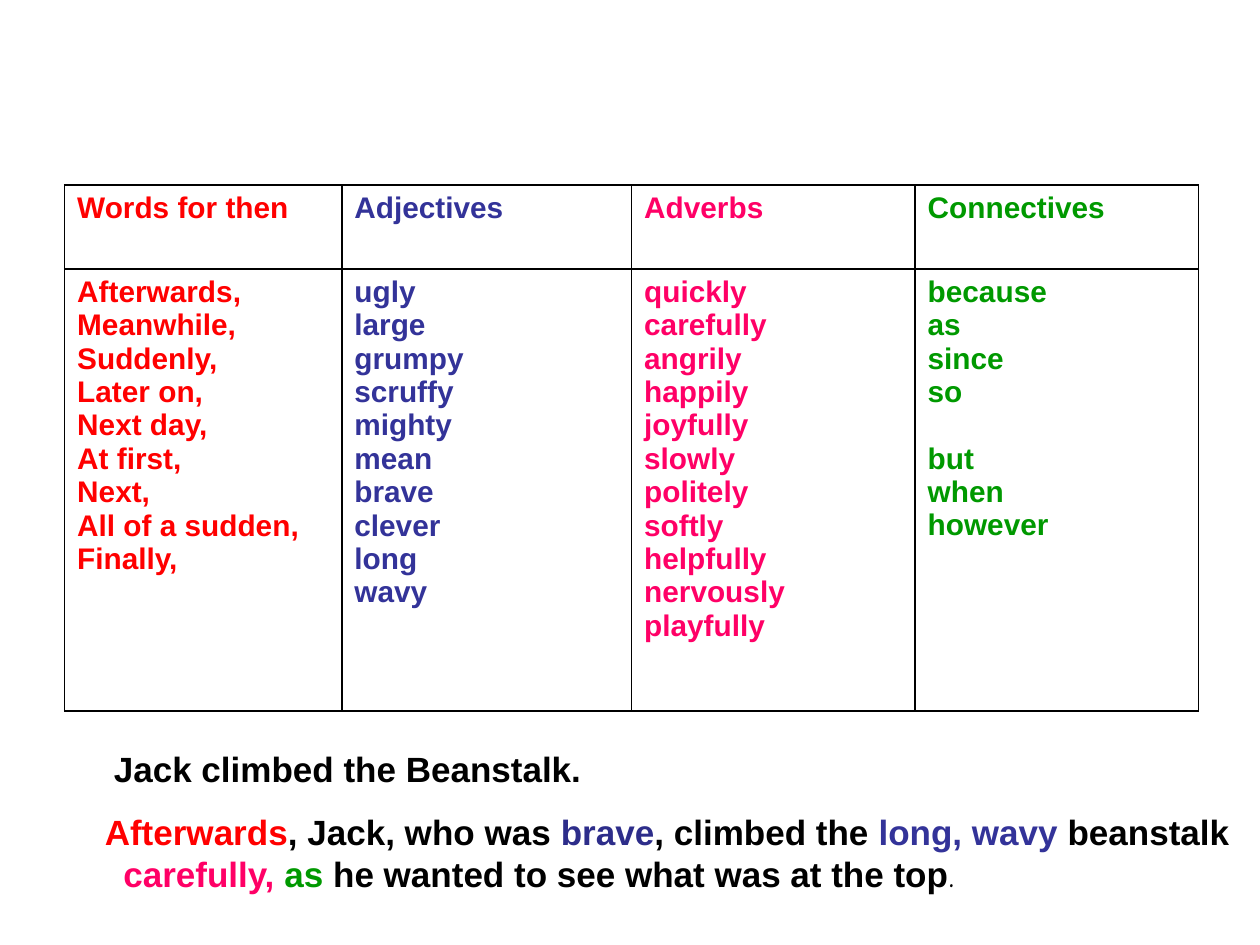
import pptx
import pptx.dml.color
import pptx.oxml
import pptx.oxml.ns
import pptx.util

Pt = pptx.util.Pt

COLOURS = {
    "then": "FF0000",
    "adjective": "333399",
    "brave": "2D2D8A",
    "adverb": "FF0066",
    "connective": "009900",
    "plain": "000000",
}

# Each column: heading, colour name, width in points, groups of words.
COLUMNS = [
    ("Words for then", "then", 158.4,
     [["Afterwards,", "Meanwhile,", "Suddenly,", "Later on,", "Next day,",
       "At first,", "Next,", "All of a sudden,", "Finally,"]]),
    ("Adjectives", "adjective", 165.6,
     [["ugly", "large", "grumpy", "scruffy", "mighty", "mean", "brave",
       "clever", "long", "wavy"]]),
    ("Adverbs", "adverb", 162,
     [["quickly", "carefully", "angrily", "happily", "joyfully", "slowly",
       "politely", "softly", "helpfully", "nervously", "playfully"]]),
    ("Connectives", "connective", 162,
     [["because", "as", "since", "so"], ["but", "when", "however"]]),
]
ROW_HEIGHTS = [48, 252.6]
GROUP_GAP = 19

IMPROVED_SENTENCE = [
    ("Afterwards", "then"),
    (", Jack, who was ", "plain"),
    ("brave", "brave"),
    (", climbed the ", "plain"),
    ("long, wavy", "adjective"),
    (" beanstalk ", "plain"),
    ("carefully, ", "adverb"),
    ("as", "connective"),
    (" he wanted to see what was at the top", "plain"),
]


def add_span(para, text, colour, size, font="Arial", bold=True):
    span = para.add_run()
    span.text = text
    span.font.name = font
    span.font.size = Pt(size)
    span.font.bold = bold
    span.font.color.rgb = pptx.dml.color.RGBColor.from_string(COLOURS[colour])


def set_indent(para, left, first_line):
    properties = para._p.get_or_add_pPr()
    properties.set("marL", str(Pt(left)))
    properties.set("indent", str(Pt(first_line)))


def set_borders(cell):
    """Draw a thin solid line on all four sides of the cell."""
    properties = cell._tc.get_or_add_tcPr()
    for position, side in enumerate(("lnL", "lnR", "lnT", "lnB")):
        line = pptx.oxml.parse_xml(
            f'<a:{side} {pptx.oxml.ns.nsdecls("a")} w="{Pt(1)}"><a:solidFill>'
            f'<a:srgbClr val="{COLOURS["plain"]}"/></a:solidFill></a:{side}>')
        properties.insert(position, line)


def fill_cell(cell, groups, colour):
    """Write one word per paragraph, with a gap before each later group."""
    cell.fill.background()
    set_borders(cell)
    frame = cell.text_frame
    for group_number, words in enumerate(groups):
        for word_number, word in enumerate(words):
            first = group_number == word_number == 0
            para = frame.paragraphs[0] if first else frame.add_paragraph()
            if group_number and not word_number:
                para.space_before = Pt(GROUP_GAP)
            add_span(para, word, colour, 17)


def add_word_table(page):
    width = sum(column[2] for column in COLUMNS)
    table = page.shapes.add_table(
        len(ROW_HEIGHTS), len(COLUMNS), Pt(36.9), Pt(105.7),
        Pt(width), Pt(sum(ROW_HEIGHTS))).table
    table.first_row = False
    table.horz_banding = False
    for row, height in zip(table.rows, ROW_HEIGHTS):
        row.height = Pt(height)
    for number, (heading, colour, width, groups) in enumerate(COLUMNS):
        table.columns[number].width = Pt(width)
        fill_cell(table.cell(0, number), [[heading]], colour)
        fill_cell(table.cell(1, number), groups, colour)


def add_sentences(page):
    box = page.shapes.add_textbox(Pt(0), Pt(423.4), Pt(720), Pt(127.4))
    frame = box.text_frame
    frame.word_wrap = True

    simple = frame.paragraphs[0]
    set_indent(simple, 58, 0)
    add_span(simple, "Jack climbed the Beanstalk.", "plain", 20)

    improved = frame.add_paragraph()
    set_indent(improved, 63.4, -10.6)
    improved.space_before = Pt(12)
    for text, colour in IMPROVED_SENTENCE:
        add_span(improved, text, colour, 20)
    add_span(improved, ".", "plain", 20, font="Comic Neue", bold=False)


def main():
    deck = pptx.Presentation()
    deck.slide_width = Pt(720)
    deck.slide_height = Pt(540)
    page = deck.slides.add_slide(deck.slide_layouts.get_by_name("Blank"))
    add_sentences(page)
    add_word_table(page)
    deck.save("out.pptx")


if __name__ == "__main__":
    main()
